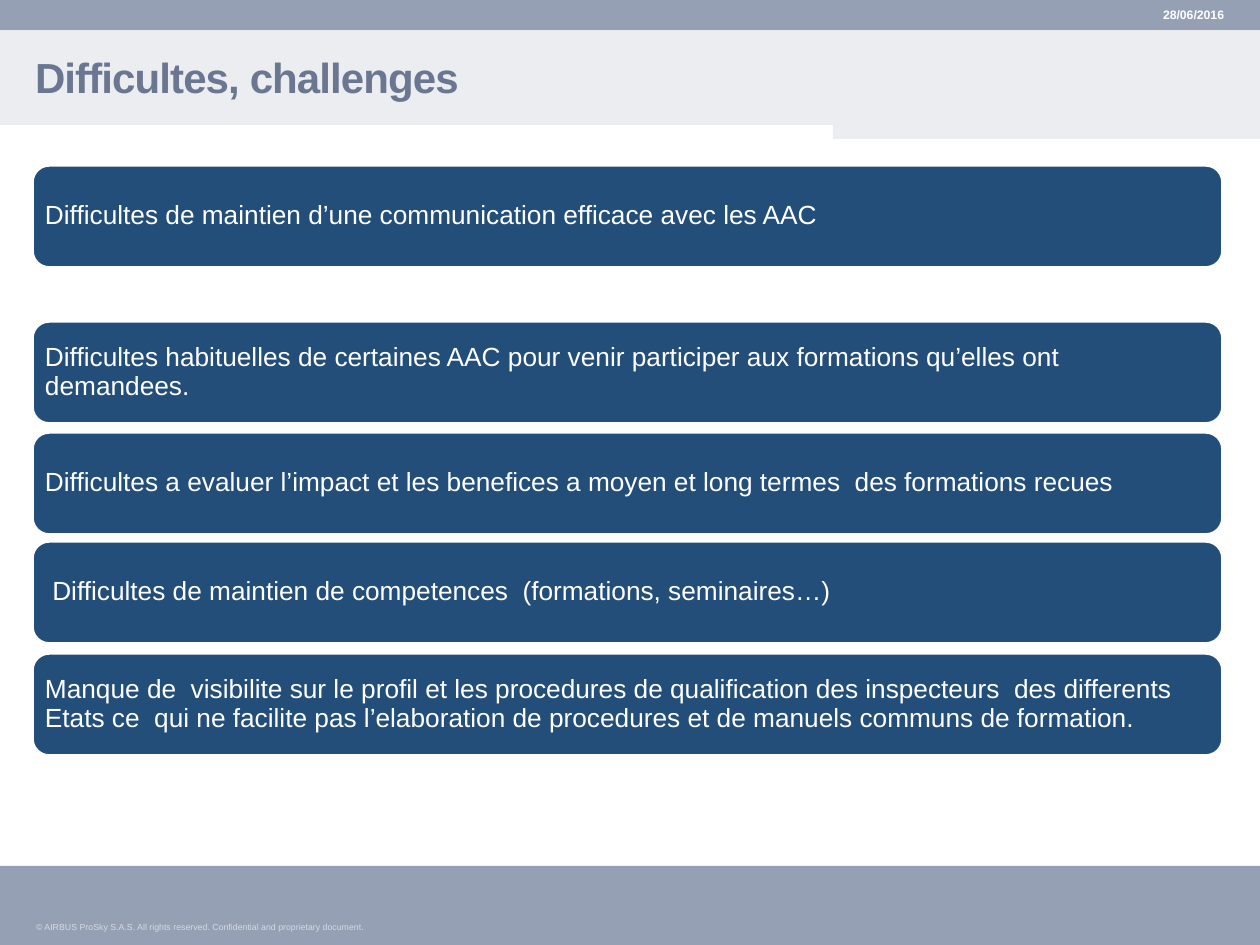
from dataclasses import dataclass

from pptx import Presentation
from pptx.dml.color import RGBColor as RGB
from pptx.enum.shapes import MSO_SHAPE as Shape
from pptx.enum.text import MSO_ANCHOR as Anchor, PP_ALIGN as Align
from pptx.util import Emu, Pt


@dataclass(frozen=True)
class Theme:
    font: str = "Arial"
    white: str = "FFFFFF"
    bar: str = "96A0B4"
    band: str = "EBEDF0"
    title: str = "6B7791"
    card: str = "224E79"
    legal: str = "D7DAE1"
    title_size: int = 24
    card_size: int = 15
    date_size: int = 7
    legal_size: int = 5


def px(n):
    """Turn pixels (126 to the inch) into EMU."""
    return Emu(round(n * 914400 / 126))


class Page:
    def __init__(self, slide, theme):
        self.slide, self.theme = slide, theme

    def paint(self, shape, fill, line=None):
        shape.shadow.inherit = False
        shape.fill.solid()
        shape.fill.fore_color.rgb = RGB.from_string(fill)
        if line:
            shape.line.color.rgb = RGB.from_string(line)
            shape.line.width = Pt(2)
        else:
            shape.line.fill.background()

    def set_text(self, shape, text, size, color, bold=False, align=Align.LEFT,
                 inset=(0, 0, 0, 0), spacing=None):
        frame = shape.text_frame
        frame.word_wrap = True
        frame.vertical_anchor = Anchor.MIDDLE
        (frame.margin_left, frame.margin_top,
         frame.margin_right, frame.margin_bottom) = map(px, inset)
        para = frame.paragraphs[0]
        para.alignment = align
        if spacing:
            para.line_spacing = spacing
        run = para.add_run()
        run.text = text
        font = para.font
        font.name, font.size, font.bold = self.theme.font, Pt(size), bold
        font.color.rgb = RGB.from_string(color)
        return run

    def bar(self, *box):
        shape = self.slide.shapes.add_shape(Shape.RECTANGLE, *map(px, box))
        self.paint(shape, self.theme.bar)

    def band(self, points):
        first, *rest = [tuple(map(px, point)) for point in points]
        form = self.slide.shapes.build_freeform(*first, scale=1.0)
        form.add_line_segments(rest, close=True)
        self.paint(form.convert_to_shape(), self.theme.band)

    def label(self, box, text, size, color, **style):
        shape = self.slide.shapes.add_textbox(*map(px, box))
        return self.set_text(shape, text, size, color, **style)

    def card(self, box, text, align):
        theme = self.theme
        shape = self.slide.shapes.add_shape(Shape.ROUNDED_RECTANGLE, *map(px, box))
        self.paint(shape, theme.card, theme.white)
        self.set_text(shape, text, theme.card_size, theme.white, align=align,
                      inset=(8, 8, 8, 8), spacing=0.9)


CARDS = [
    (165, "Difficultes de maintien d’une communication efficace avec les AAC", Align.LEFT),
    (321, "Difficultes habituelles de certaines AAC pour venir participer aux "
          "formations qu’elles ont demandees.", Align.LEFT),
    (432, "Difficultes a evaluer l’impact et les benefices a moyen et long termes  "
          "des formations recues", Align.LEFT),
    (541, " Difficultes de maintien de competences  (formations, seminaires…)",
     Align.JUSTIFY),
    (653, "Manque de  visibilite sur le profil et les procedures de qualification "
          "des inspecteurs  des differents Etats ce  qui ne facilite pas "
          "l’elaboration de procedures et de manuels communs de formation.", Align.LEFT),
]


def main():
    deck = Presentation()
    deck.slide_width, deck.slide_height = px(1260), px(945)
    theme = Theme()
    page = Page(deck.slides.add_slide(deck.slide_layouts[6]), theme)

    page.band([(0, 30), (1260, 30), (1260, 139), (833, 139), (833, 125), (0, 125)])
    page.bar(0, 866, 1260, 79)
    page.bar(0, 0, 1260, 30)
    page.label((36, 922, 421, 16),
               "© AIRBUS ProSky S.A.S. All rights reserved. "
               "Confidential and proprietary document.",
               theme.legal_size, theme.legal, inset=(0, 0, 13, 6))
    title = page.label((35, 39, 1191, 84), "Difficultes, challenges",
                       theme.title_size, theme.title, bold=True, spacing=0.8)
    title._r.get_or_add_rPr().set("spc", "-50")
    page.label((1055, 0, 169, 30), "28/06/2016", theme.date_size, theme.white,
               bold=True, align=Align.RIGHT)
    for top, text, align in CARDS:
        page.card((32, top, 1191, 103), text, align)

    deck.save("out.pptx")


if __name__ == "__main__":
    main()
